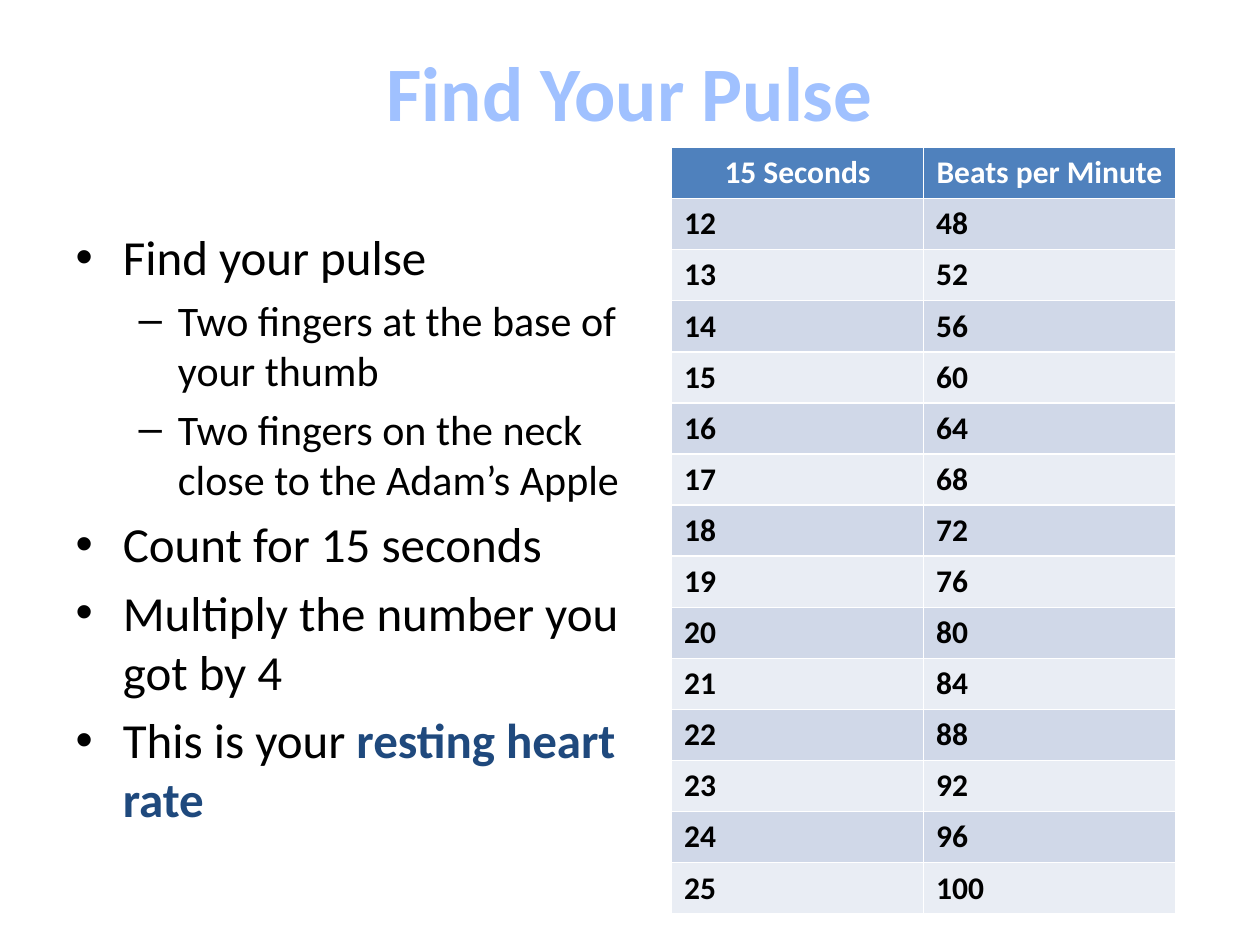
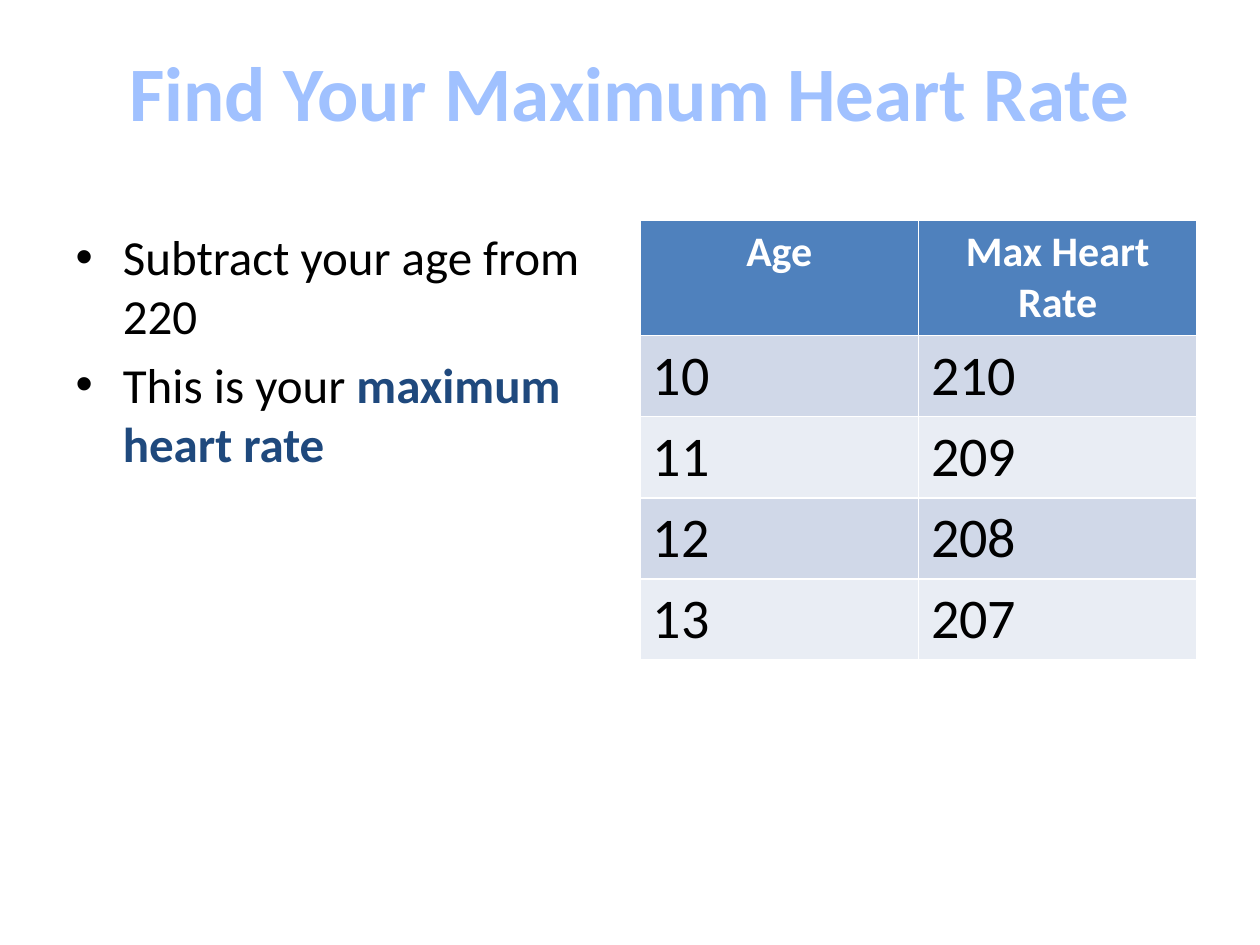
from pptx import Presentation
from pptx.dml.color import RGBColor
from pptx.enum.text import MSO_ANCHOR as Anchor, PP_ALIGN as Align
from pptx.util import Inches, Pt

FONT = "Calibri"
TITLE_BLUE = "A0C1FF"
KEY_TERM_BLUE = "1F497D"
HEADER_BLUE = "4F81BD"
BANDS = ("D0D8E8", "E9EDF4")
BLACK = "000000"
WHITE = "FFFFFF"
LEVEL_SIZES = (28, 24)


def style_font(font, size, color, bold=False):
    font.name = FONT
    font.size = Pt(size)
    font.bold = bold
    font.color.rgb = RGBColor.from_string(color)


def place(placeholder, left, top, width, height):
    placeholder.left, placeholder.top = Inches(left), Inches(top)
    placeholder.width, placeholder.height = Inches(width), Inches(height)


def add_titled_slide(deck, heading):
    slide = deck.slides.add_slide(deck.slide_layouts[1])
    title = slide.shapes.title
    place(title, 0.5, 0.3, 9, 1.25)
    title.text_frame.text = heading
    title.text_frame.vertical_anchor = Anchor.TOP
    paragraph = title.text_frame.paragraphs[0]
    paragraph.alignment = Align.CENTER
    style_font(paragraph.font, 44, TITLE_BLUE, bold=True)
    return slide


def fill_steps(slide, width, steps):
    body = slide.placeholders[1]
    place(body, 0.5, 1.75, width, 4.95)
    frame = body.text_frame
    for index, (level, text, key_term) in enumerate(steps):
        paragraph = frame.add_paragraph() if index else frame.paragraphs[0]
        paragraph.level = level
        style_font(paragraph.font, LEVEL_SIZES[level], BLACK)
        paragraph.add_run().text = text
        if key_term:
            term = paragraph.add_run()
            term.text = key_term
            style_font(term.font, LEVEL_SIZES[level], KEY_TERM_BLUE, bold=True)


def fill_cell(cell, text, background, size, color, bold, alignment):
    cell.fill.solid()
    cell.fill.fore_color.rgb = RGBColor.from_string(background)
    cell.margin_left = cell.margin_right = Inches(0.1)
    cell.margin_top = cell.margin_bottom = Inches(0.05)
    cell.text = str(text)
    paragraph = cell.text_frame.paragraphs[0]
    paragraph.alignment = alignment
    style_font(paragraph.font, size, color, bold)


def add_rate_table(slide, left, top, width, headings, rates, header_height,
                   row_height, header_size, rate_size, bold_rates):
    height = header_height + row_height * len(rates)
    table = slide.shapes.add_table(
        len(rates) + 1, len(headings),
        Inches(left), Inches(top), Inches(width), Inches(height)).table
    table.rows[0].height = Inches(header_height)
    for column, heading in enumerate(headings):
        fill_cell(table.cell(0, column), heading, HEADER_BLUE,
                  header_size, WHITE, True, Align.CENTER)
    for row, rate in enumerate(rates, start=1):
        table.rows[row].height = Inches(row_height)
        for column, value in enumerate(rate):
            fill_cell(table.cell(row, column), value, BANDS[(row - 1) % 2],
                      rate_size, BLACK, bold_rates, Align.LEFT)


def build_pulse_slide(deck):
    slide = add_titled_slide(deck, "Find Your Pulse")
    fill_steps(slide, 4.58, [
        (0, "Find your pulse", ""),
        (1, "Two fingers at the base of your thumb", ""),
        (1, "Two fingers on the neck close to the Adam’s Apple", ""),
        (0, "Count for 15 seconds", ""),
        (0, "Multiply the number you got by 4", ""),
        (0, "This is your ", "resting heart rate"),
    ])
    add_rate_table(slide, 5.33, 1.17, 4, ("15 Seconds", "Beats per Minute"),
                   [(beats, beats * 4) for beats in range(12, 26)],
                   header_height=6.08 / 15, row_height=6.08 / 15,
                   header_size=18, rate_size=18, bold_rates=True)


def build_maximum_slide(deck):
    slide = add_titled_slide(deck, "Find Your Maximum Heart Rate")
    fill_steps(slide, 4.42, [
        (0, "Subtract your age from 220", ""),
        (0, "This is your ", "maximum heart rate"),
    ])
    add_rate_table(slide, 5.08, 1.75, 4.42, ("Age", "Max Heart Rate"),
                   [(age, 220 - age) for age in range(10, 14)],
                   header_height=0.9, row_height=0.64,
                   header_size=24, rate_size=32, bold_rates=False)


def main():
    deck = Presentation()
    deck.slide_width, deck.slide_height = Inches(10), Inches(7.5)
    build_pulse_slide(deck)
    build_maximum_slide(deck)
    deck.save("out.pptx")


if __name__ == "__main__":
    main()
